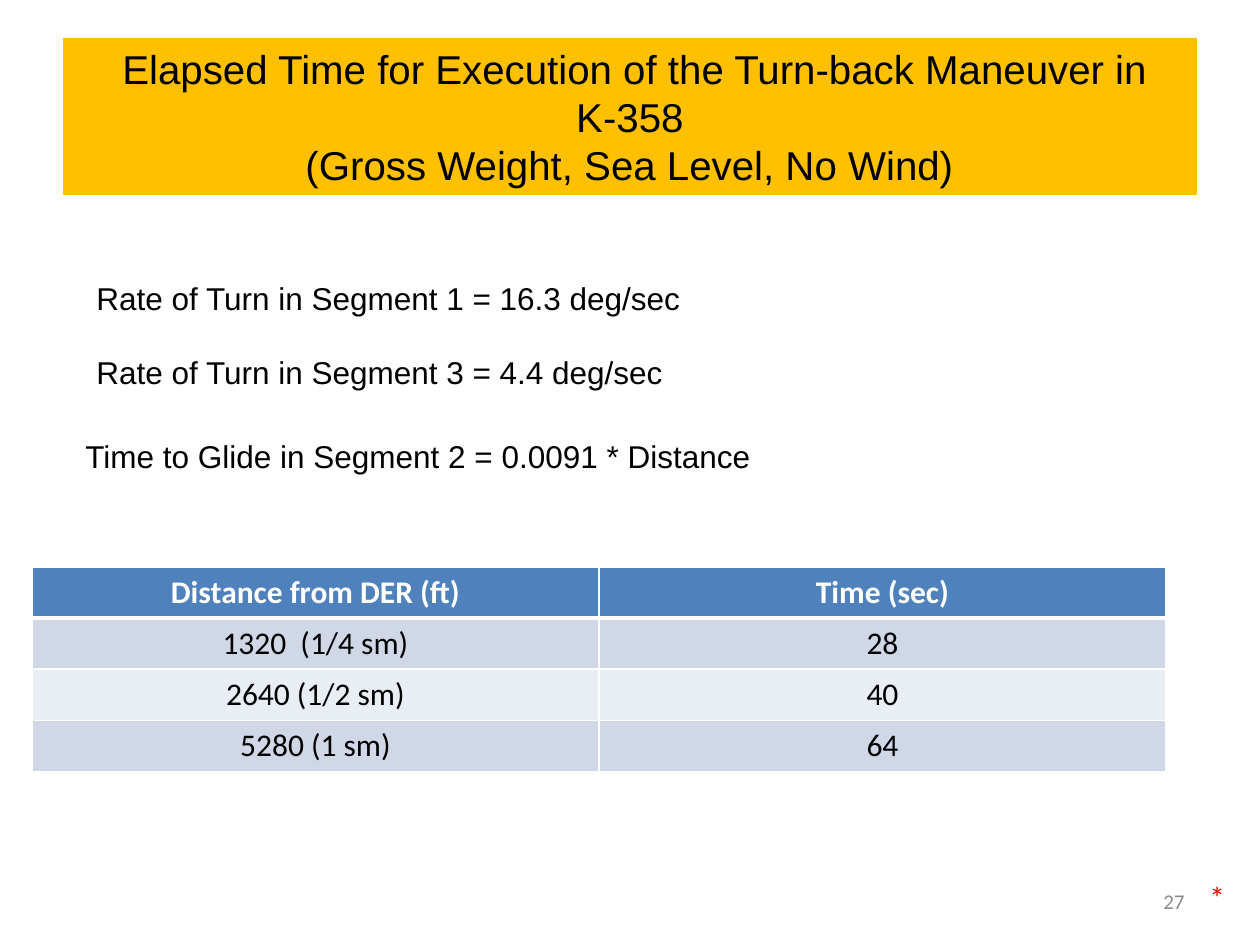
from lxml import etree
from pptx import Presentation
from pptx.dml.color import RGBColor
from pptx.enum.text import MSO_ANCHOR, MSO_AUTO_SIZE, PP_ALIGN
from pptx.oxml.ns import qn
from pptx.util import Emu, Pt

LEFT, CENTER, RIGHT = PP_ALIGN.LEFT, PP_ALIGN.CENTER, PP_ALIGN.RIGHT
TOP, MIDDLE = MSO_ANCHOR.TOP, MSO_ANCHOR.MIDDLE
NO_FIT = MSO_AUTO_SIZE.NONE

BLACK = RGBColor(0x00, 0x00, 0x00)
WHITE = RGBColor(0xFF, 0xFF, 0xFF)
GRAY = RGBColor(0x89, 0x89, 0x89)
RED = RGBColor(0xFF, 0x00, 0x00)
AMBER = RGBColor(0xFF, 0xC0, 0x00)
BLUE = RGBColor(0x4F, 0x81, 0xBD)
BANDS = (RGBColor(0xE9, 0xED, 0xF4), RGBColor(0xD0, 0xD8, 0xE8))

TITLE = (" Elapsed Time for Execution of the Turn-back Maneuver in K-358\v"
         "(Gross Weight, Sea Level, No Wind)")
FORMULAS = (
    ("Rate of Turn in Segment 1 = 16.3 deg/sec", (84, 273, 615, 89), True),
    ("Rate of Turn in Segment 3 = 4.4 deg/sec", (84, 347, 607, 50), True),
    ("Time to Glide in Segment 2 = 0.0091 * Distance", (73, 431, 697, 50), False),
)
TIMES = (
    ("Distance from DER (ft)", "Time (sec)"),
    ("1320  (1/4 sm)", "28"),
    ("2640 (1/2 sm)", "40"),
    ("5280 (1 sm)", "64"),
)


def px(n):
    """Turn pixels at 126 to the inch into EMU."""
    return Emu(round(n * 914400 / 126))


def write(tf, text, size, font, color, align=LEFT, bold=False):
    """Fill a text frame and format its runs."""
    tf.text = text
    for p in tf.paragraphs:
        p.alignment = align
        for r in p.runs:
            r.font.size = Pt(size)
            r.font.name = font
            r.font.bold = bold
            r.font.color.rgb = color


def add_title(s):
    """Place the title on its amber band."""
    sp = s.shapes.title
    sp.left, sp.top, sp.width, sp.height = map(px, (63, 38, 1134, 157))
    sp.fill.solid()
    sp.fill.fore_color.rgb = AMBER
    tf = sp.text_frame
    write(tf, TITLE, 23, "Arial", BLACK, CENTER)
    tf.vertical_anchor = MIDDLE
    tf.auto_size = NO_FIT


def add_text(s, text, box, size, font, color, align=LEFT, anchor=TOP, wrap=True):
    """Add a text box."""
    tf = s.shapes.add_textbox(*map(px, box)).text_frame
    tf.word_wrap = wrap
    tf.vertical_anchor = anchor
    write(tf, text, size, font, color, align)


def set_border(cell, side, width):
    """Draw a white border on one side of a cell."""
    ln = etree.Element(qn(f"a:{side}"), w=str(Pt(width)))
    fill = etree.SubElement(ln, qn("a:solidFill"))
    etree.SubElement(fill, qn("a:srgbClr"), val=str(WHITE))
    cell._tc.get_or_add_tcPr().insert(0, ln)


def add_times(s):
    """Add the table of elapsed times by distance."""
    frame = s.shapes.add_table(len(TIMES), 2, *map(px, (32, 567, 1134, 204)))
    for i, row in enumerate(TIMES):
        header = i == 0
        for j, text in enumerate(row):
            cell = frame.table.cell(i, j)
            cell.fill.solid()
            cell.fill.fore_color.rgb = BLUE if header else BANDS[i % 2]
            write(cell.text_frame, text, 18, "Calibri",
                  WHITE if header else BLACK, CENTER, header)
            for side, edge in (("lnB", i + 1), ("lnT", i), ("lnR", 0), ("lnL", 0)):
                set_border(cell, side, 3 if edge == 1 else 1)


def main():
    """Build the slide and save it."""
    prs = Presentation()
    prs.slide_width, prs.slide_height = px(1260), px(945)
    s = prs.slides.add_slide(prs.slide_layouts[5])
    add_title(s)
    add_times(s)
    add_text(s, "27", (903, 876, 294, 50), 12, "Calibri", GRAY, RIGHT, MIDDLE)
    for text, box, wrap in FORMULAS:
        add_text(s, text, box, 18, "Arial", BLACK, wrap=wrap)
    add_text(s, "*", (1197, 872, 42, 50), 18, "Calibri", RED, wrap=False)
    prs.save("out.pptx")


if __name__ == "__main__":
    main()
